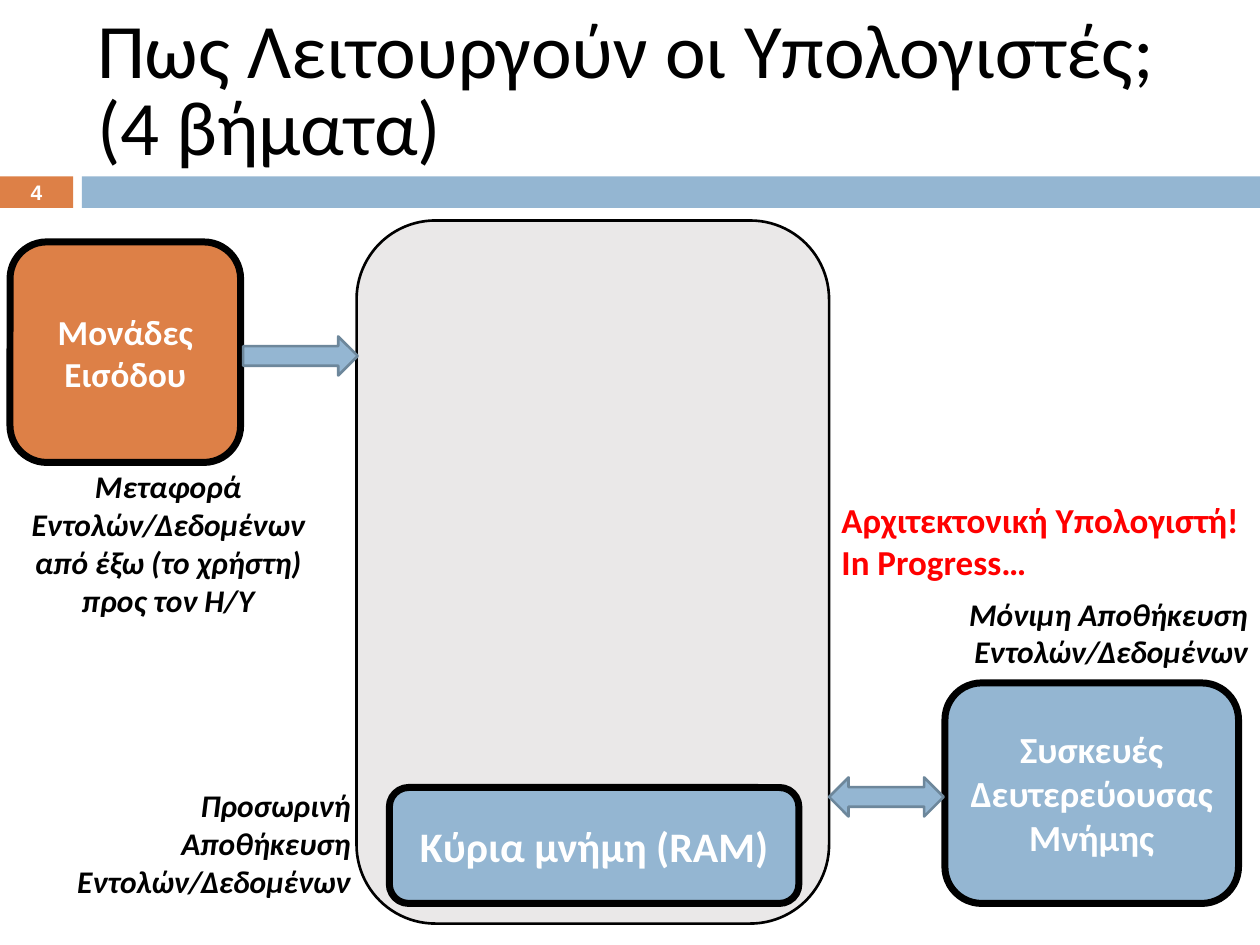
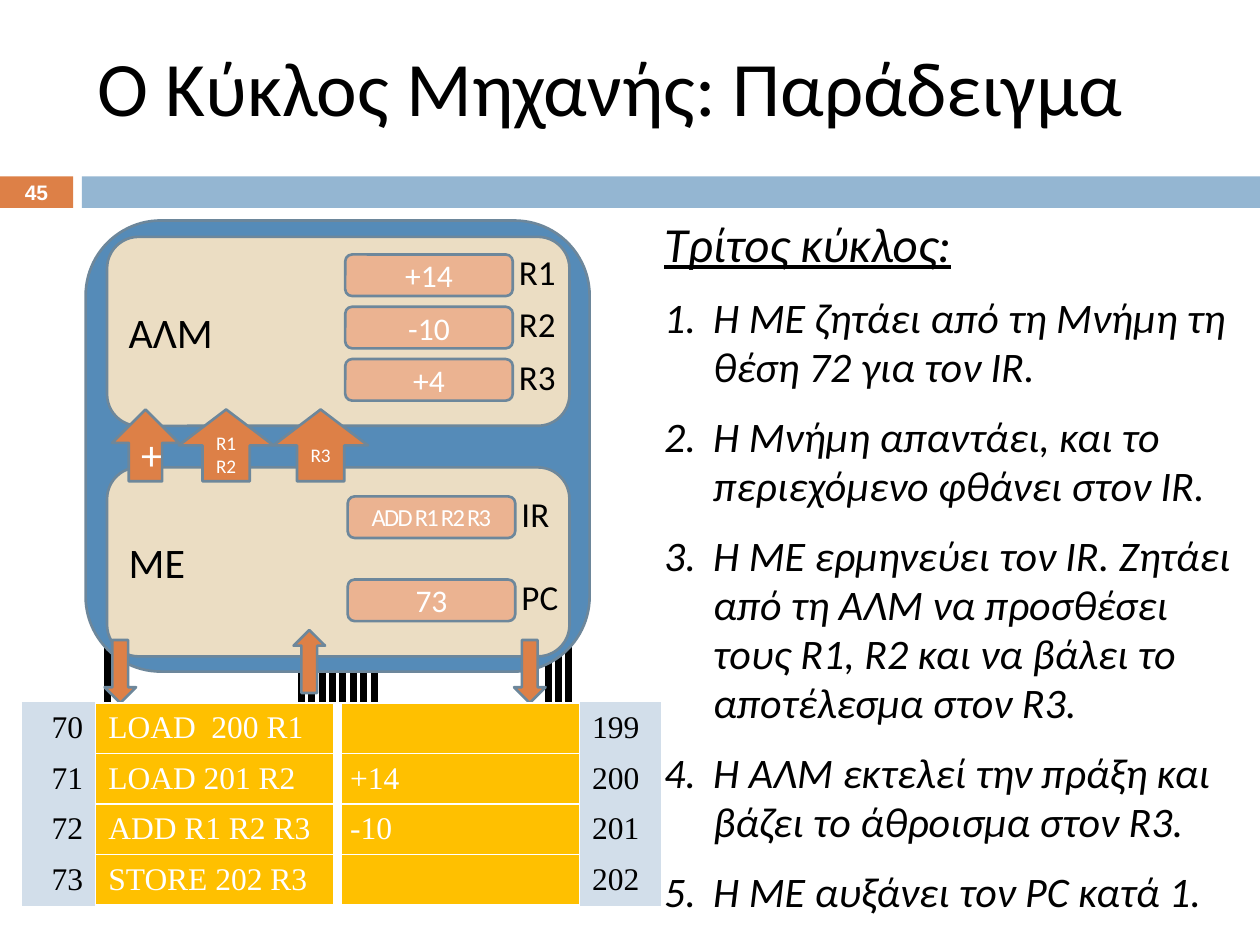
from lxml.etree import SubElement
from pptx import Presentation
from pptx.dml.color import RGBColor
from pptx.enum.shapes import MSO_CONNECTOR, MSO_SHAPE
from pptx.enum.text import MSO_ANCHOR, MSO_AUTO_SIZE, PP_ALIGN
from pptx.oxml import parse_xml
from pptx.oxml.ns import nsdecls, qn
from pptx.util import Inches, Pt

BLACK, WHITE, RED = "000000", "FFFFFF", "FF0000"
ORANGE, BLUE, EDGE = "DD8047", "94B6D2", "6D879B"
CASE_GREY, CHIP_BLUE, UNIT_SAND, REGISTER = "EAE8E8", "558BB8", "EBDDC3", "EBB391"
MEMORY_GOLD, ADDRESS_BLUE = "FFC000", "D2DEEA"
LEFT, CENTER, RIGHT = PP_ALIGN.LEFT, PP_ALIGN.CENTER, PP_ALIGN.RIGHT
ROUND = MSO_SHAPE.ROUNDED_RECTANGLE
ROW_HEIGHT = 0.4


def color(value):
    return RGBColor.from_string(value)


def write(frame, text, size=18, ink=BLACK, font="Calibri", bold=False, italic=False,
          underline=False, align=LEFT, line_spacing=None, space_before=None, tracking=None):
    """Fill a text frame, one paragraph for each line of text."""
    for index, line in enumerate(text.split("\n")):
        para = frame.add_paragraph() if index else frame.paragraphs[0]
        para.text = line
        para.alignment = align
        if line_spacing:
            para.line_spacing = Pt(line_spacing)
        if space_before:
            para.space_before = Pt(space_before)
        for span in para.runs:
            span.font.name = font
            span.font.size = Pt(size)
            span.font.bold = bold
            span.font.italic = italic
            span.font.underline = underline
            span.font.color.rgb = color(ink)
            if tracking:
                span.font._element.set("spc", str(tracking * 100))


def add_block(page, kind, box, fill, edge=None, weight=1.5, text="", **style):
    block = page.shapes.add_shape(kind, *map(Inches, box))
    block.shadow.inherit = False
    block.fill.solid()
    block.fill.fore_color.rgb = color(fill)
    if edge:
        block.line.color.rgb = color(edge)
        block.line.width = Pt(weight)
    else:
        block.line.fill.background()
    if text:
        write(block.text_frame, text, **style)
    return block


def add_label(page, box, text, anchor=MSO_ANCHOR.TOP, **style):
    label = page.shapes.add_textbox(*map(Inches, box))
    label.text_frame.word_wrap = True
    label.text_frame.vertical_anchor = anchor
    write(label.text_frame, text, **style)


def add_line(page, x, top, bottom, ink, weight):
    line = page.shapes.add_connector(
        MSO_CONNECTOR.STRAIGHT, Inches(x), Inches(top), Inches(x), Inches(bottom))
    line.line.color.rgb = color(ink)
    line.line.width = Pt(weight)
    SubElement(line._element.spPr, qn("a:effectLst"))


def place(holder, box):
    holder.left, holder.top, holder.width, holder.height = map(Inches, box)
    holder.text_frame.auto_size = MSO_AUTO_SIZE.NONE


def start_page(deck, layout, title, number):
    """Add a slide with the shared title, bands and slide number."""
    page = deck.slides.add_slide(deck.slide_layouts[layout])
    place(page.shapes.title, (0.67, 0.08, 9.33, 1.33))
    page.shapes.title.text_frame.vertical_anchor = MSO_ANCHOR.MIDDLE
    write(page.shapes.title.text_frame, title, size=44, line_spacing=44)
    add_block(page, MSO_SHAPE.RECTANGLE, (0, 1.4, 0.58, 0.25), ORANGE)
    add_block(page, MSO_SHAPE.RECTANGLE, (0.65, 1.4, 9.35, 0.25), BLUE)
    add_label(page, (0, 1.39, 0.58, 0.27), number, MSO_ANCHOR.MIDDLE,
              size=12, ink=WHITE, font="Arial", bold=True, align=CENTER)
    return page


def add_computer(page, left, top):
    add_block(page, ROUND, (left, top, 3.75, 5.58), CASE_GREY, BLACK)
    add_block(page, ROUND, (left + 0.26, top + 4.5, 3.25, 0.92), BLUE, BLACK, 4,
              "Κύρια μνήμη (RAM)", size=24, ink=WHITE, bold=True, align=CENTER)
    add_label(page, (left - 2.41, top + 4.44, 2.46, 1),
              "Προσωρινή Αποθήκευση\nΕντολών/Δεδομένων", bold=True, italic=True, align=RIGHT)


def add_input_units(page, left, top):
    add_block(page, ROUND, (left, top, 1.83, 1.75), ORANGE, BLACK, 4,
              "Μονάδες\nΕισόδου", size=20, ink=WHITE, bold=True, align=CENTER)
    add_block(page, MSO_SHAPE.RIGHT_ARROW, (left + 1.85, top + 0.75, 0.91, 0.31), BLUE, EDGE)
    add_label(page, (left - 0.08, top + 1.74, 2.67, 1.31),
              "Μεταφορά Εντολών/Δεδομένων από έξω (το χρήστη) προς τον Η/Υ",
              bold=True, italic=True, align=CENTER)


def add_storage(page, left, top):
    add_block(page, ROUND, (left, top, 2.33, 1.75), BLUE, BLACK, 4,
              "Συσκευές\nΔευτερεύουσας\nΜνήμης", size=21, ink=WHITE, bold=True, align=CENTER)
    add_block(page, MSO_SHAPE.LEFT_RIGHT_ARROW, (left - 0.92, top + 0.75, 0.91, 0.31), BLUE, EDGE)
    add_label(page, (left - 0.92, top - 0.75, 3.42, 0.71),
              "Μόνιμη Αποθήκευση Εντολών/Δεδομένων", bold=True, italic=True, align=RIGHT)


def build_architecture(deck):
    page = start_page(deck, 5, "Πως Λειτουργούν οι Υπολογιστές;\v(4 βήματα)", "4")
    add_computer(page, 2.83, 1.75)
    add_input_units(page, 0.08, 1.92)
    add_storage(page, 7.5, 5.42)
    add_label(page, (6.58, 3.83, 3.38, 0.92), "Αρχιτεκτονική Υπολογιστή!\nIn Progress…",
              MSO_ANCHOR.MIDDLE, size=20, ink=RED, bold=True)


def add_steps(page, box):
    heading = "Τρίτος κύκλος:"
    steps = [
        "Η ΜΕ ζητάει από τη Μνήμη τη θέση 72 για τον IR.",
        "Η Μνήμη απαντάει, και το περιεχόμενο φθάνει στον IR.",
        "Η ΜΕ ερμηνεύει τον IR. Ζητάει από τη ΑΛΜ να προσθέσει τους R1, R2 "
        "και να βάλει το αποτέλεσμα στον R3.",
        "Η ΑΛΜ εκτελεί την πράξη και βάζει το άθροισμα στον R3.",
        "Η ΜΕ αυξάνει τον PC κατά 1.",
    ]
    body = page.placeholders[1]
    place(body, box)
    frame = body.text_frame
    write(frame, "\n".join([heading] + steps), size=24, italic=True,
          line_spacing=28, space_before=12)
    for index, para in enumerate(frame.paragraphs):
        properties = para._p.get_or_add_pPr()
        indent = Inches(0.39) if index else 0
        properties.set("marL", str(indent))
        properties.set("indent", str(-indent))
        if index:
            SubElement(properties, qn("a:buAutoNum"), type="arabicPeriod")
        else:
            SubElement(properties, qn("a:buNone"))
            para.space_before = Pt(6)
            para.runs[0].font.size = Pt(28)
            para.runs[0].font.underline = True


def add_memory_table(page, left, top, widths, rows, fill, border, **style):
    holder = page.shapes.add_table(len(rows), len(widths), Inches(left), Inches(top),
                                   Inches(sum(widths)), Inches(ROW_HEIGHT * len(rows)))
    table = holder.table
    table.first_row = table.horz_banding = False
    for column, width in zip(table.columns, widths):
        column.width = Inches(width)
    for row, values in zip(table.rows, rows):
        row.height = Inches(ROW_HEIGHT)
        for cell, value in zip(row.cells, values):
            cell.vertical_anchor = MSO_ANCHOR.MIDDLE
            cell.fill.solid()
            cell.fill.fore_color.rgb = color(fill)
            write(cell.text_frame, value, font="Times New Roman", **style)
            for index, side in enumerate("LRTB"):
                cell._tc.tcPr.insert(index, parse_xml(
                    f'<a:ln{side} {nsdecls("a")} w="{Pt(1)}"><a:solidFill>'
                    f'<a:srgbClr val="{border}"/></a:solidFill></a:ln{side}>'))


def add_memory(page, left, top):
    """Draw the memory words with their addresses on both sides."""
    words = [("LOAD  200 R1", ""), ("LOAD 201 R2", "+14"),
             ("ADD R1 R2 R3", "-10"), ("STORE 202 R3", "")]
    for offset, width, first, align in [(0, 0.58, 70, RIGHT), (4.42, 0.64, 199, LEFT)]:
        addresses = [(str(first + row),) for row in range(len(words))]
        add_memory_table(page, left + offset, top, [width], addresses,
                         ADDRESS_BLUE, ADDRESS_BLUE, align=align)
    add_memory_table(page, left + 0.58, top, [1.92, 1.92], words,
                     MEMORY_GOLD, WHITE, ink=WHITE)
    add_line(page, left + 2.5, top, top + ROW_HEIGHT * len(words), WHITE, 5)


def add_buses(page, top):
    for first, count in [(0.85, 1), (2.39, 8), (4.35, 3)]:
        for wire in range(count):
            add_line(page, first + wire * 0.083, top, top + 0.68, BLACK, 4)


def add_register(page, left, top, name, value, **style):
    style = {"size": 18, **style}
    add_block(page, ROUND, (left, top, 1.33, 0.33), REGISTER, EDGE, text=value,
              ink=WHITE, align=CENTER, **style)
    add_label(page, (left + 1.28, top - 0.08, 0.52, 0.44), name, size=20)


def add_processor(page, left, top):
    add_block(page, ROUND, (left, top, 4, 3.58), CHIP_BLUE, EDGE)
    for offset, unit in [(0.13, "ΑΛΜ"), (1.96, "ΜΕ")]:
        add_block(page, ROUND, (left + 0.17, top + offset, 3.67, 1.5), UNIT_SAND, EDGE,
                  text=unit, size=24)
    for index, value in enumerate(["+14", "-10", "+4"]):
        add_register(page, left + 2.06, top + 0.27 + index * 0.415, f"R{index + 1}", value)
    add_register(page, left + 2.08, top + 2.19, "IR", "ADD R1 R2 R3", size=14, tracking=-1)
    add_register(page, left + 2.08, top + 2.85, "PC", "73")
    for offset, width, text, size in [(0.74, 0.75, "R1 R2", 11), (0.21, 0.53, "+", 24),
                                      (1.49, 0.75, "R3", 11)]:
        add_block(page, MSO_SHAPE.UP_ARROW, (left + offset, top + 1.5, width, 0.57), ORANGE,
                  EDGE, text=text, size=size, ink=WHITE, align=CENTER)
    for offset, drop, kind in [(0.15, 3.33, MSO_SHAPE.DOWN_ARROW),
                               (3.4, 3.33, MSO_SHAPE.DOWN_ARROW),
                               (1.65, 3.25, MSO_SHAPE.UP_ARROW)]:
        add_block(page, kind, (left + offset, top + drop, 0.25, 0.5), ORANGE, EDGE)


def build_machine_cycle(deck):
    page = start_page(deck, 1, "Ο Κύκλος Μηχανής: Παράδειγμα", "45")
    add_steps(page, (5.17, 1.72, 4.83, 5.78))
    add_buses(page, 5.08)
    add_processor(page, 0.68, 1.75)
    add_memory(page, 0.18, 5.58)


def main():
    deck = Presentation()
    deck.slide_width, deck.slide_height = Inches(10), Inches(7.5)
    build_architecture(deck)
    build_machine_cycle(deck)
    deck.save("out.pptx")


if __name__ == "__main__":
    main()
